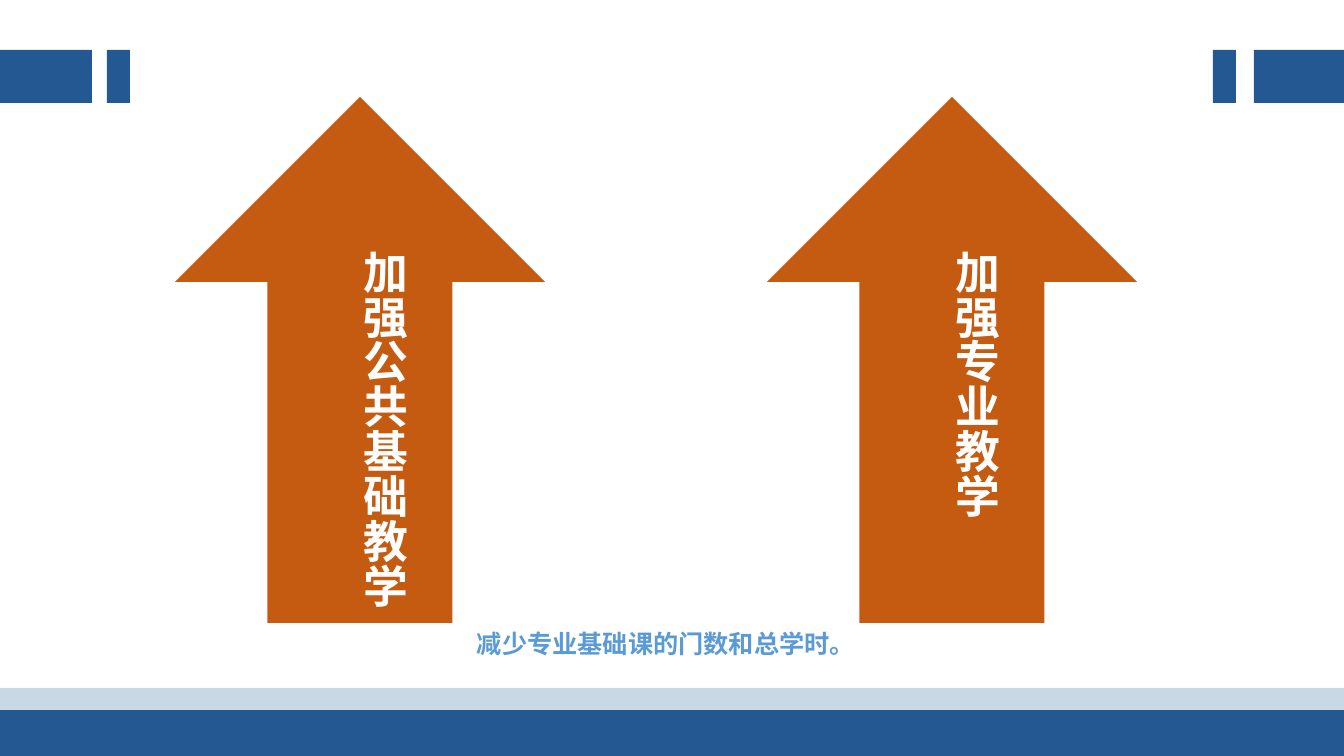
from lxml.etree import SubElement
from pptx import Presentation
from pptx.dml.color import RGBColor
from pptx.enum.shapes import MSO_SHAPE
from pptx.enum.text import MSO_AUTO_SIZE
from pptx.oxml.ns import qn
from pptx.util import Pt

# Content: lengths in px, 100.8 px to the inch
PX = 914400 / 100.8
SLIDE_W, SLIDE_H = 1344, 756
FONT = "Noto Sans CJK SC"
NAVY, PALE, ORANGE, WHITE, SKY = "235893", "C8D8E5", "C55A11", "FFFFFF", "5B9BD5"

FOOTER_BANDS = [(688, 55, PALE), (710, 46, NAVY)]  # top, height, colour
TAB_TOP, TAB_H = 50, 53
TABS = [(0, 92), (107, 23), (1213, 23), (1254, 90)]  # left, width

ARROW_TOP, ARROW_W, ARROW_H = 97, 370, 526
ARROWS = [(175, "加强公共基础教学", 369), (767, "加强专业教学", 279)]  # left, label, label height
LABEL_DX, LABEL_TOP, LABEL_W = 167, 240, 74
CAPTION = "减少专业基础课的门数和总学时。"
CAPTION_BOX = (467, 623, 393, 40)


def emu(*lengths):
    return [round(length * PX) for length in lengths]


def color(hex_string):
    return RGBColor.from_string(hex_string)


def add_block(kind, box, fill):
    block = slide.shapes.add_shape(kind, *emu(*box))
    block.shadow.inherit = False
    block.fill.solid()
    block.fill.fore_color.rgb = color(fill)
    block.line.fill.background()


def add_text(text, box, *, size, fill, vertical=False):
    frame = slide.shapes.add_textbox(*emu(*box)).text_frame
    frame.word_wrap = not vertical
    frame.auto_size = MSO_AUTO_SIZE.SHAPE_TO_FIT_TEXT
    if vertical:
        frame._txBody.bodyPr.set("vert", "eaVert")
    run = frame.paragraphs[0].add_run()
    run.text = text
    run.font.size = Pt(size)
    run.font.bold = True
    run.font.color.rgb = color(fill)
    run.font.name = FONT
    SubElement(run.font._element, qn("a:ea"), typeface=FONT)


prs = Presentation()
prs.slide_width, prs.slide_height = emu(SLIDE_W, SLIDE_H)
slide = prs.slides.add_slide(prs.slide_layouts[6])

# Footer bands and corner tabs
for top, height, fill in FOOTER_BANDS:
    add_block(MSO_SHAPE.RECTANGLE, (0, top, SLIDE_W, height), fill)
for left, width in TABS:
    add_block(MSO_SHAPE.RECTANGLE, (left, TAB_TOP, width, TAB_H), NAVY)

# Arrows with vertical labels
for left, label, label_h in ARROWS:
    add_block(MSO_SHAPE.UP_ARROW, (left, ARROW_TOP, ARROW_W, ARROW_H), ORANGE)
    add_text(label, (left + LABEL_DX, LABEL_TOP, LABEL_W, label_h),
             size=32, fill=WHITE, vertical=True)

# Caption
add_text(CAPTION, CAPTION_BOX, size=18, fill=SKY)

prs.save("out.pptx")
